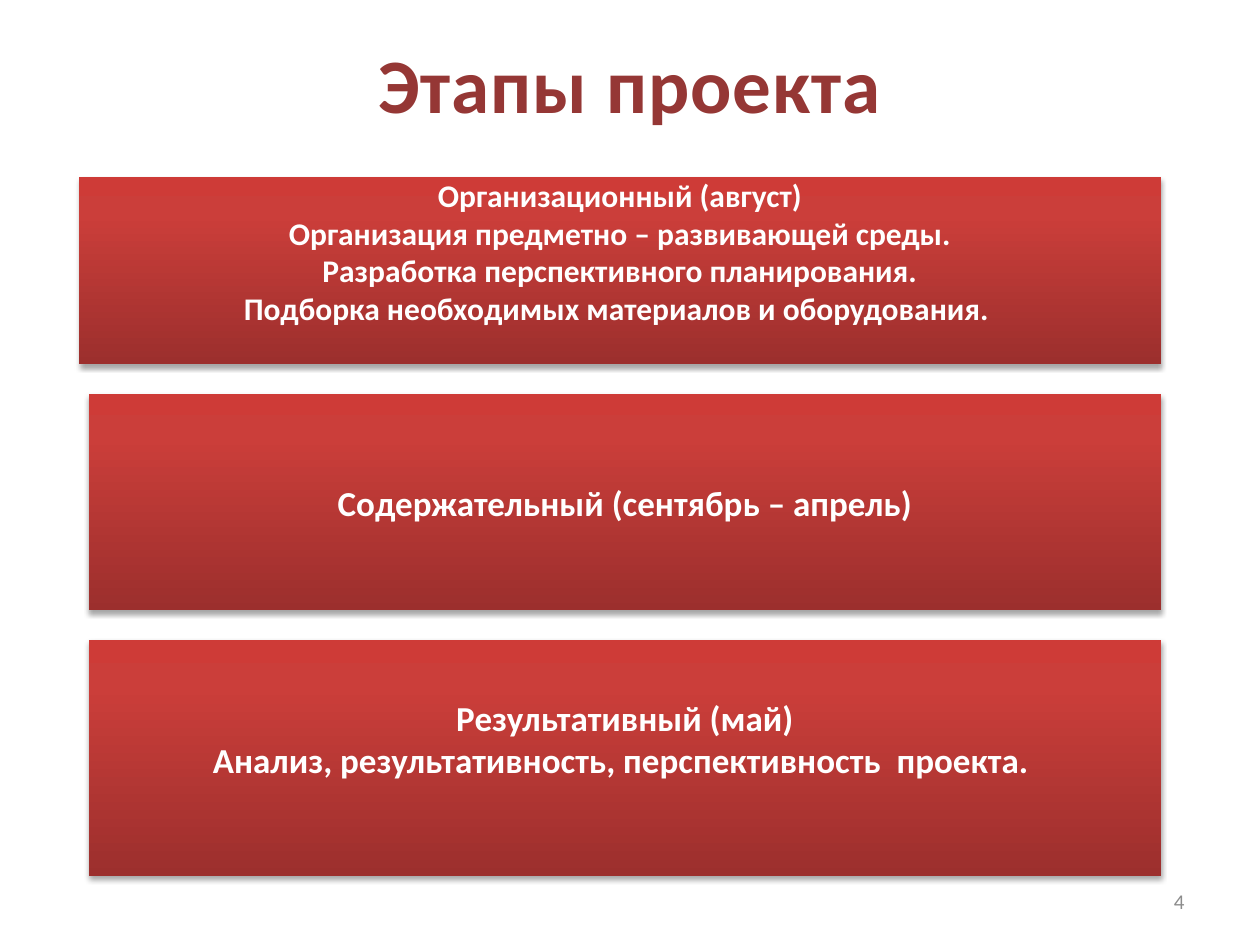
from lxml import etree
from pptx import Presentation
from pptx.dml.color import RGBColor
from pptx.enum import shapes, text
from pptx.oxml import ns
from pptx.util import Pt

COLORS = {"title": "953735", "white": "FFFFFF", "number": "8C8C8C", "shadow": "000000",
          "dark": "9C2F2D", "mid": "CB3E3A", "light": "CE3B37"}
STOPS = [(0, "dark"), (80, "mid"), (100, "light")]


class Deck:
    """Holds the slide, its font and its palette, and draws each kind of element."""

    def __init__(self, slide, font="Calibri"):
        self.slide, self.font = slide, font

    def fill_text(self, sp, lines, size, color, bold=True, align="CENTER", insets=(3.6, 3.6), spacing=0):
        tf = sp.text_frame
        tf.word_wrap = True
        tf.vertical_anchor = text.MSO_ANCHOR.MIDDLE
        tf.margin_top, tf.margin_bottom = (Pt(v) for v in insets)
        for i, line in enumerate(lines):
            p = tf.add_paragraph() if i else tf.paragraphs[0]
            r = p.add_run()
            r.text = line
            p.alignment = text.PP_ALIGN[align]
            p.font.name, p.font.size, p.font.bold = self.font, Pt(size), bold
            p.font.color.rgb = RGBColor.from_string(COLORS[color])
            if spacing:
                r._r.get_or_add_rPr().set("spc", str(int(spacing * 100)))

    def label(self, box, line, size, color, **style):
        sp = self.slide.shapes.add_textbox(*map(Pt, box))
        self.fill_text(sp, [line], size, color, **style)

    def panel(self, box, lines, size, insets):
        sp = self.slide.shapes.add_shape(shapes.MSO_SHAPE.RECTANGLE, *map(Pt, box))
        sp.shadow.inherit = False
        sp.line.fill.background()
        self.gradient(sp)
        self.shadow(sp)
        self.fill_text(sp, lines, size, "white", insets=insets)

    def gradient(self, sp):
        sp.fill.gradient()
        sp.fill.gradient_angle = 90
        stops = sp._element.spPr.find(".//" + ns.qn("a:gsLst"))
        for gs in list(stops):
            stops.remove(gs)
        for pos, name in STOPS:
            gs = etree.SubElement(stops, ns.qn("a:gs"), pos=str(pos * 1000))
            etree.SubElement(gs, ns.qn("a:srgbClr"), val=COLORS[name])

    def shadow(self, sp):
        effects = sp._element.spPr.find(ns.qn("a:effectLst"))
        outer = etree.SubElement(effects, ns.qn("a:outerShdw"), blurRad=str(Pt(3.1)),
                                 dist=str(Pt(1.8)), dir="5400000", rotWithShape="0")
        color = etree.SubElement(outer, ns.qn("a:srgbClr"), val=COLORS["shadow"])
        etree.SubElement(color, ns.qn("a:alpha"), val="35000")


def main():
    prs = Presentation()
    prs.slide_width, prs.slide_height = Pt(720), Pt(540)
    deck = Deck(prs.slides.add_slide(prs.slide_layouts[6]))
    deck.label((36, 21.6, 648, 51.8), "Этапы проекта", 44, "title", spacing=0.5)
    stages = [
        ((45, 101.3, 618.5, 106.6), 18, (0, 22),
         ["Организационный (август)", "Организация предметно – развивающей среды.",
          "Разработка перспективного планирования.",
          "Подборка необходимых материалов и оборудования. "]),
        ((50.6, 225, 613, 123.7), 20, (3.6, 3.6), ["Содержательный (сентябрь – апрель)"]),
        ((50.6, 365.6, 613, 135), 20, (3.6, 25.6),
         ["Результативный (май)", "Анализ, результативность, перспективность  проекта. "]),
    ]
    for box, size, insets, lines in stages:
        deck.panel(box, lines, size, insets)
    deck.label((516, 500.5, 168, 28.8), "4", 12, "number", bold=False, align="RIGHT")
    prs.save("out.pptx")


if __name__ == "__main__":
    main()
